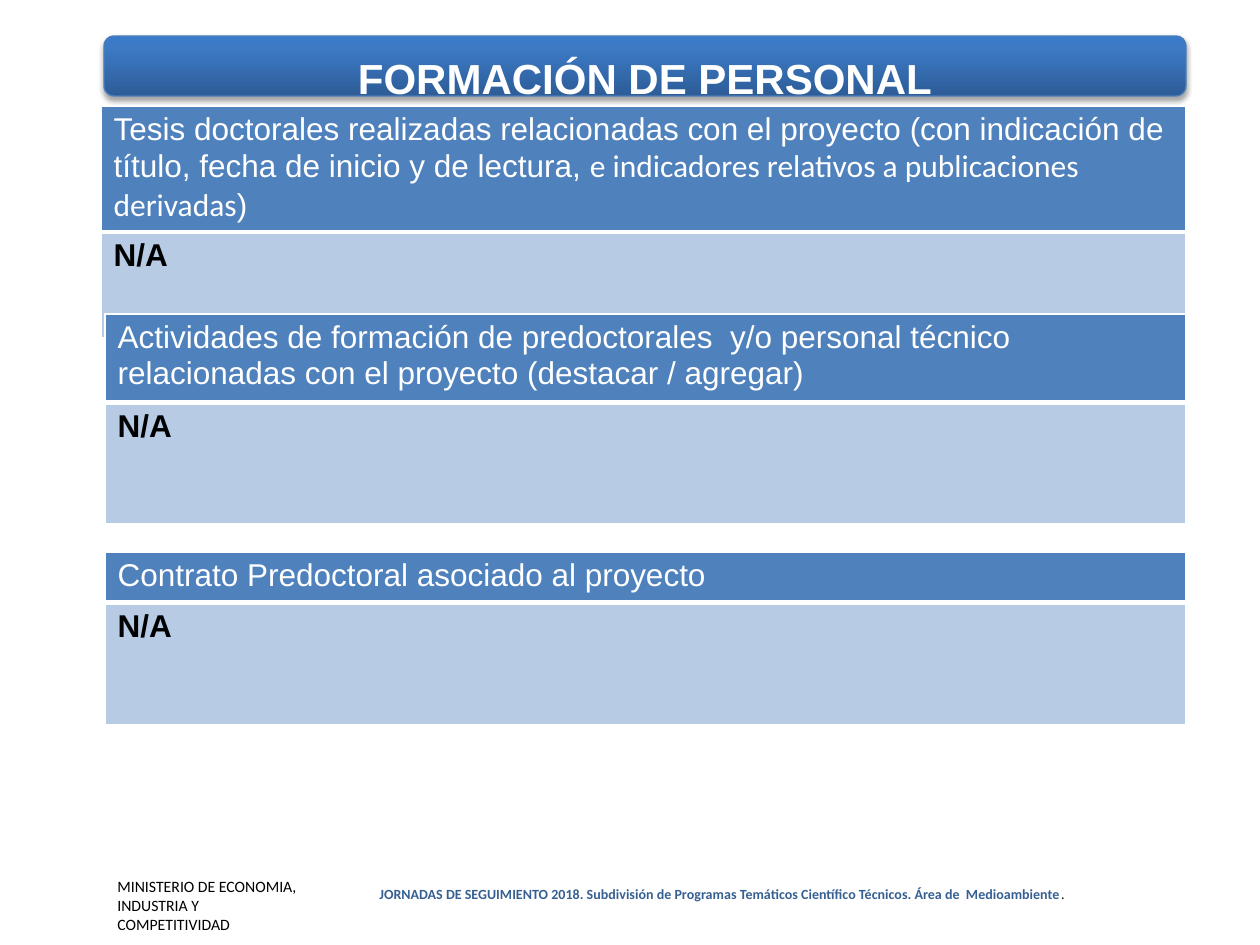
from copy import deepcopy

from lxml import etree
from pptx import Presentation
from pptx import util as u
from pptx.dml.color import RGBColor
from pptx.enum import shapes, text
from pptx.oxml.ns import qn

PX = 914400 / 126  # EMU per pixel
WHITE, BLACK, HEADER, BODY, NAVY = "FFFFFF", "000000", "4F81BD", "B7CCE4", "366092"


def px(*lengths):
    return [round(length * PX) for length in lengths]


def rgb(value):
    return RGBColor.from_string(value)


def child(parent, tag, **attributes):
    return etree.SubElement(parent, qn(tag), attributes)


def write(frame, runs, align=text.PP_ALIGN.LEFT, anchor=text.MSO_ANCHOR.TOP):
    """Fill a frame with one paragraph of (words, colour, format) runs."""
    frame.word_wrap = True
    frame.vertical_anchor = anchor
    paragraph = frame.paragraphs[0]
    paragraph.alignment = align
    for words, color, style in runs:
        run = paragraph.add_run()
        run.text = words
        run.font.color.rgb = rgb(color)
        for key, value in style.items():
            setattr(run.font, key, value)


def style(size, name="Arial", bold=False):
    return {"size": u.Pt(size), "name": name, "bold": bold}


def add_borders(cell, widths):
    properties = cell._tc.get_or_add_tcPr()
    for side, width in zip("LRTB", widths):
        line = child(properties, f"a:ln{side}", w=str(u.Pt(width)))
        child(child(line, "a:solidFill"), "a:srgbClr", val=WHITE)


def add_section(slide, left, top, width, heights, heading):
    """Two-row table: a heading and its answer."""
    frame = slide.shapes.add_table(2, 1, *px(left, top, width, sum(heights)))
    table = frame.table
    answer = [("N/A", BLACK, style(18, bold=True))]
    rows = ((heading, HEADER, (1, 1, 1, 3)), (answer, BODY, (1, 1, 3, 1)))
    for index, (runs, color, widths) in enumerate(rows):
        table.rows[index].height = px(heights[index])[0]
        cell = table.cell(index, 0)
        add_borders(cell, widths)
        cell.fill.solid()
        cell.fill.fore_color.rgb = rgb(color)
        write(cell.text_frame, runs)


def add_title(slide, words):
    banner = slide.shapes.add_shape(
        shapes.MSO_SHAPE.ROUNDED_RECTANGLE, *px(104, 36, 1082, 60))
    banner.adjustments[0] = 0.17
    # Gradient running upwards, with a third stop
    banner.fill.gradient()
    banner.fill.gradient_angle = 90
    first_stop = next(banner._element.iter(qn("a:gs")))
    first_stop.addnext(deepcopy(first_stop))
    stops = ((0, "2D5C97"), (0.8, "3C7AC5"), (1, "397BC9"))
    for stop, (position, color) in zip(banner.fill.gradient_stops, stops):
        stop.position = position
        stop.color.rgb = rgb(color)
    banner.line.color.rgb = rgb("4A7DBA")
    banner.line.width = u.Pt(0.75)
    # Soft shadow below
    banner.shadow.inherit = False
    effects = next(banner._element.iter(qn("a:effectLst")))
    shadow = child(effects, "a:outerShdw", blurRad=str(u.Pt(3.1)),
                   dist=str(u.Pt(1.8)), dir="5400000", rotWithShape="0")
    child(child(shadow, "a:srgbClr", val=BLACK), "a:alpha", val="35000")
    banner.text_frame.margin_top = px(14)[0]
    write(banner.text_frame, [(words, WHITE, style(24, bold=True))],
          text.PP_ALIGN.CENTER)


def add_footer(slide):
    ministry = slide.shapes.add_shape(
        shapes.MSO_SHAPE.RECTANGLE, *px(105, 868, 217, 74))
    ministry.shadow.inherit = False
    ministry.fill.solid()
    ministry.fill.fore_color.rgb = rgb(WHITE)
    ministry.line.fill.background()
    write(ministry.text_frame,
          [("MINISTERIO DE ECONOMIA, INDUSTRIA Y COMPETITIVIDAD", BLACK,
            style(9, "Calibri"))], anchor=text.MSO_ANCHOR.MIDDLE)

    event = slide.shapes.add_textbox(*px(367, 879, 790, 30))
    write(event.text_frame, [
        ("JORNADAS DE SEGUIMIENTO 2018. Subdivisión de Programas Temáticos "
         "Científico Técnicos. Área de  Medioambiente", NAVY,
         style(8, "Calibri", True)),
        (".", BLACK, style(8, "Calibri"))])


def main():
    deck = Presentation()
    deck.slide_width, deck.slide_height = px(1260, 945)
    slide = deck.slides.add_slide(deck.slide_layouts[6])

    add_footer(slide)

    # Theses, partly covered by the training section
    add_section(slide, 101, 106, 1085, (124, 106), [
        ("Tesis doctorales realizadas relacionadas con el proyecto (con "
         "indicación de título, fecha de inicio y de lectura, ", WHITE, style(18)),
        ("e indicadores relativos a publicaciones derivadas", WHITE,
         style(18, "Calibri")),
        (")", WHITE, style(18))])
    add_title(slide, "FORMACIÓN DE PERSONAL")

    # Training and contract
    add_section(slide, 105, 314, 1081, (83, 122), [
        ("Actividades de formación de predoctorales  y/o personal técnico "
         "relacionadas con el proyecto (destacar / agregar)", WHITE, style(18))])
    add_section(slide, 105, 552, 1081, (48, 122), [
        ("Contrato Predoctoral asociado al proyecto", WHITE, style(18))])

    deck.save("out.pptx")


if __name__ == "__main__":
    main()
